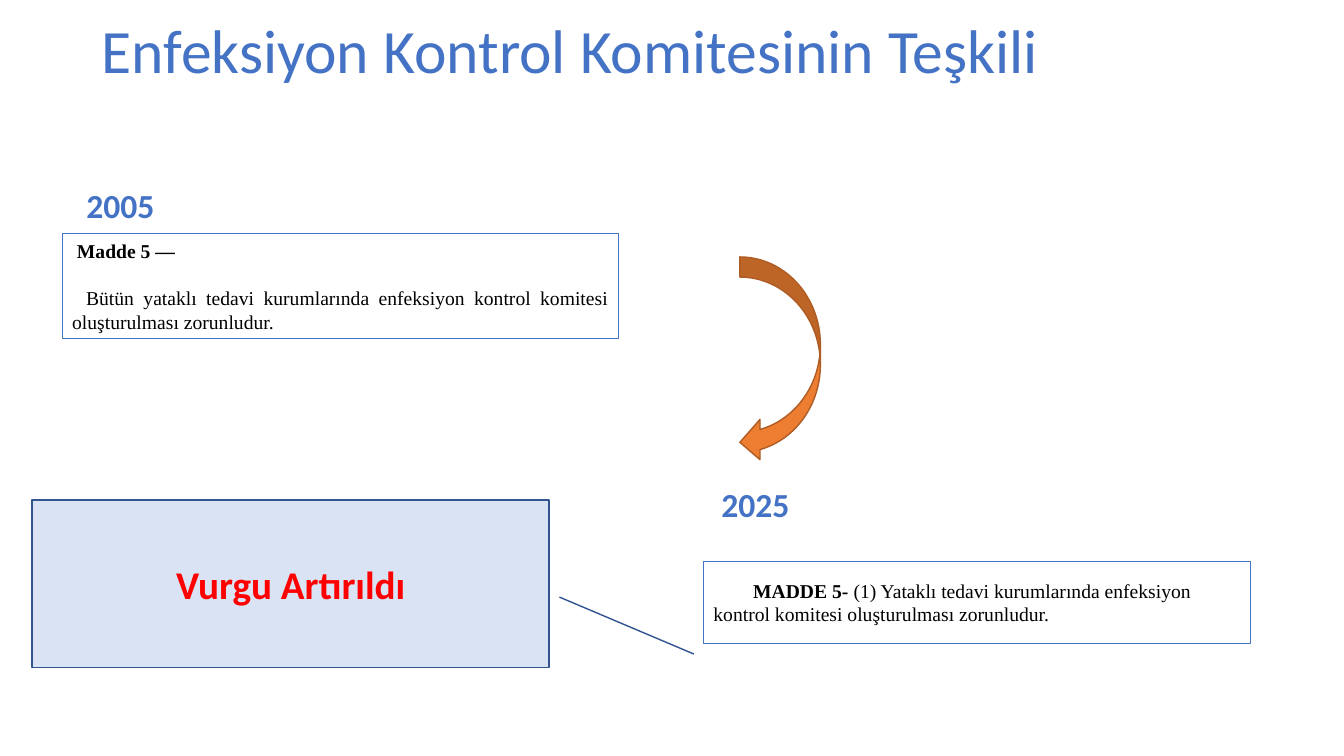
from pptx import Presentation
from pptx.dml.color import RGBColor
from pptx.enum.shapes import MSO_SHAPE as Shape
from pptx.enum.text import MSO_ANCHOR as Anchor, MSO_AUTO_SIZE as AutoSize, PP_ALIGN as Align
from pptx.util import Cm, Pt

BLUE, BLACK, RED = "4472C4", "000000", "FF0000"
SERIF = "Times New Roman"


def rgb(value):
    return RGBColor.from_string(value)


def write(tf, paragraphs, size, color, font="Calibri", anchor=Anchor.MIDDLE, align=Align.LEFT):
    """Fill a frame; each paragraph is (indent in cm, [(text, bold), ...])."""
    tf.word_wrap = True
    tf.auto_size = AutoSize.NONE
    tf.vertical_anchor = anchor
    for i, (indent, runs) in enumerate(paragraphs):
        p = tf.paragraphs[0] if i == 0 else tf.add_paragraph()
        p.alignment = align
        p._p.get_or_add_pPr().set("indent", str(Cm(indent)))
        if i:
            p.space_before = Pt(16.5)
        for text, bold in runs:
            r = p.add_run()
            r.text = text
            r.font.name, r.font.size, r.font.bold = font, Pt(size), bold
            r.font.color.rgb = rgb(color)


prs = Presentation()
prs.slide_width, prs.slide_height = Cm(33.87), Cm(19.05)
s = prs.slides.add_slide(prs.slide_layouts[5])

title = s.shapes.title
title.left, title.top, title.width, title.height = Cm(2.31), Cm(0.3), Cm(29.21), Cm(2.08)
write(title.text_frame, [(0, [("Enfeksiyon Kontrol Komitesinin Teşkili", False)])], 44, BLUE)
title.text_frame.paragraphs[0].line_spacing = 0.9

# Year headings
for year, left, top in [("2005", 1.93, 3.53), ("2025", 17.93, 11.05)]:
    tf = s.shapes.add_textbox(Cm(left), Cm(top), Cm(14.35), Cm(2.29)).text_frame
    write(tf, [(0, [(year, True)])], 24, BLUE, anchor=Anchor.BOTTOM)
    tf.paragraphs[0].line_spacing = 0.9

# Wording of the article in each year
old_article = [
    (0.12, [("Madde 5 —", True)]),
    (0.35, [("Bütün yataklı tedavi kurumlarında enfeksiyon kontrol komitesi "
             "oluşturulması zorunludur.", False)]),
]
new_article = [
    (1, [("MADDE 5- ", True),
         ("(1) Yataklı tedavi kurumlarında enfeksiyon kontrol komitesi "
          "oluşturulması zorunludur.", False)]),
]
for article, align, left, top, width, height in [
    (old_article, Align.JUSTIFY, 1.57, 5.89, 14.02, 2.64),
    (new_article, Align.LEFT, 17.73, 14.15, 13.79, 2.06),
]:
    sp = s.shapes.add_textbox(Cm(left), Cm(top), Cm(width), Cm(height))
    sp.line.color.rgb = rgb(BLUE)
    sp.line.width = Pt(0.75)
    write(sp.text_frame, article, 14, BLACK, SERIF, align=align)

# Arrow from 2005 to 2025, and the callout on the new wording
arrow = s.shapes.add_shape(Shape.CURVED_DOWN_ARROW, Cm(17.07), Cm(8.05), Cm(5.18), Cm(2.03))
arrow.rotation = 90
callout = s.shapes.add_shape(Shape.LINE_CALLOUT_1, Cm(0.81), Cm(12.6), Cm(13.03), Cm(4.22))
for i, value in enumerate([0.92, 1.28, 0.58, 1.02]):
    callout.adjustments[i] = value
for sp, fill, line in [(arrow, "ED7D31", "AF5C24"), (callout, "DAE3F3", "325491")]:
    sp.shadow.inherit = False
    sp.fill.solid()
    sp.fill.fore_color.rgb = rgb(fill)
    sp.line.color.rgb = rgb(line)
    sp.line.width = Pt(1)
write(callout.text_frame, [(0, [("Vurgu Artırıldı", True)])], 28, RED, align=Align.CENTER)

prs.save("out.pptx")
